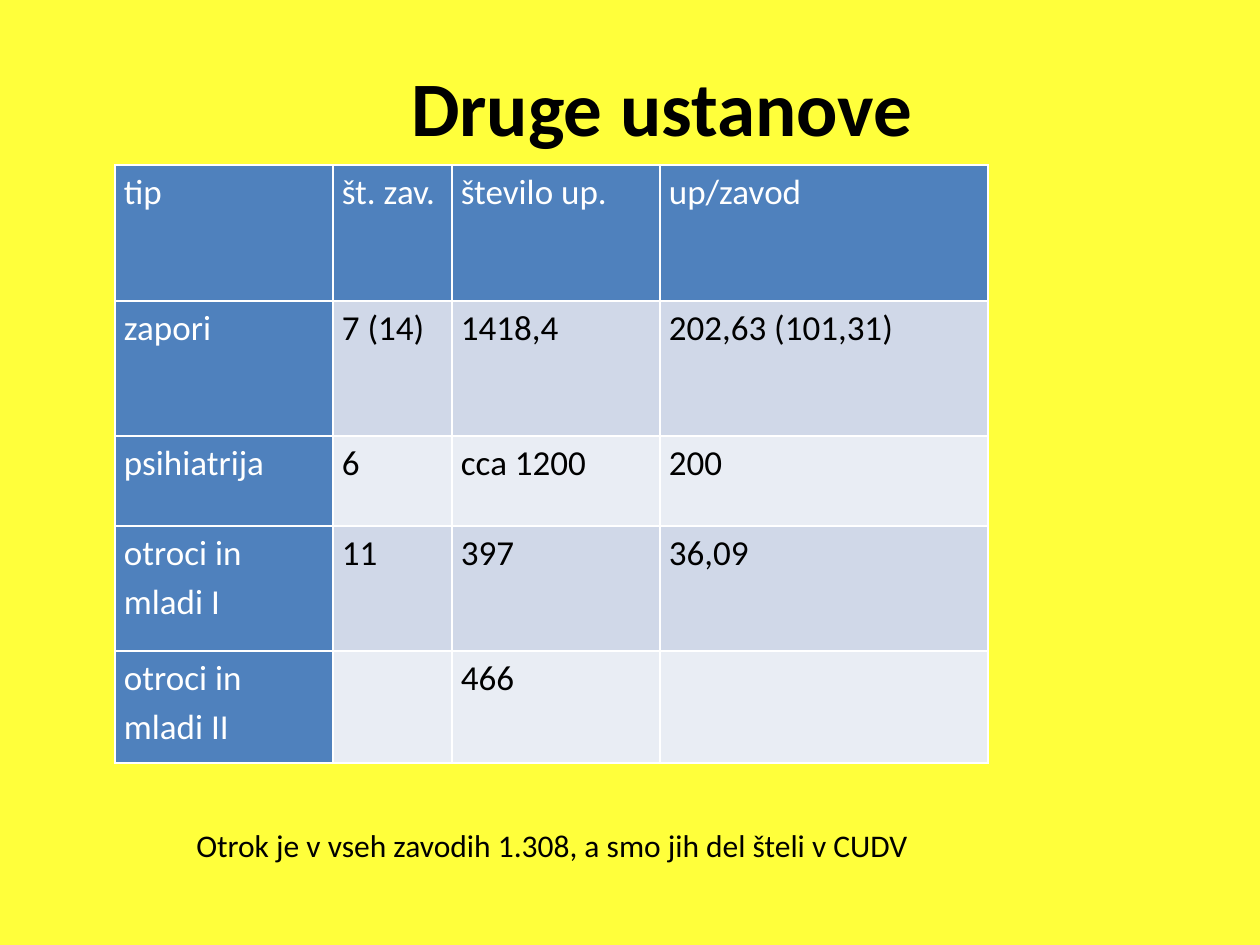
from dataclasses import dataclass

from pptx import Presentation
from pptx.dml.color import RGBColor as RGB
from pptx.enum.text import MSO_ANCHOR as ANCHOR, PP_ALIGN as ALIGN
from pptx.oxml import parse_xml
from pptx.oxml.ns import nsdecls
from pptx.util import Pt


@dataclass(frozen=True)
class Theme:
    font: str = "Calibri"
    background: RGB = RGB(0xFF, 0xFF, 0x3B)
    header: RGB = RGB(0x4F, 0x81, 0xBD)
    bands: tuple = (RGB(0xE9, 0xED, 0xF4), RGB(0xD0, 0xD8, 0xE8))
    dark: RGB = RGB(0, 0, 0)
    light: RGB = RGB(0xFF, 0xFF, 0xFF)
    title_size: int = 44
    cell_size: int = 20
    note_size: int = 18


T = Theme()


def px(n):
    return round(n * 914400 / 126)


def style(p, size, color, bold=False):
    p.font.name = T.font
    p.font.size = Pt(size)
    p.font.color.rgb = color
    p.font.bold = bold


prs = Presentation()
prs.slide_width, prs.slide_height = px(1260), px(945)
s = prs.slides.add_slide(prs.slide_layouts[6])
s.background.fill.solid()
s.background.fill.fore_color.rgb = T.background

title = s.shapes.add_textbox(px(95), px(27), px(1134), px(157))
tf = title.text_frame
tf.word_wrap = True
tf.vertical_anchor = ANCHOR.MIDDLE
p = tf.paragraphs[0]
p.text = "Druge ustanove"
p.alignment = ALIGN.CENTER
style(p, T.title_size, T.dark, bold=True)

rows = [
    ("tip", "št. zav.", "število up.", "up/zavod"),
    ("zapori", "7 (14)", "1418,4", "202,63 (101,31)"),
    ("psihiatrija", "6", "cca 1200", "200"),
    ("otroci in mladi I", "11", "397", "36,09"),
    ("otroci in mladi II", "", "466", ""),
]
col_widths = [218, 119, 208, 328]
row_heights = [136, 135, 90, 125, 112]
table = s.shapes.add_table(
    len(rows), len(col_widths), px(115), px(165), px(sum(col_widths)), px(sum(row_heights))
).table
table.first_row = table.horz_banding = False
for col, width in zip(table.columns, col_widths):
    col.width = px(width)
for row, height in zip(table.rows, row_heights):
    row.height = px(height)

for i, values in enumerate(rows):
    for j, value in enumerate(values):
        cell = table.cell(i, j)
        is_header = i == 0 or j == 0
        cell.margin_left = cell.margin_right = px(9)
        cell.margin_top = cell.margin_bottom = 0
        cell.fill.solid()
        cell.fill.fore_color.rgb = T.header if is_header else T.bands[i % 2]
        p = cell.text_frame.paragraphs[0]
        p.text = value
        p.line_spacing = 1.15
        style(p, T.cell_size, T.light if is_header else T.dark)
        tc_pr = cell._tc.get_or_add_tcPr()
        for k, side in enumerate("LRTB"):
            tc_pr.insert(k, parse_xml(
                f'<a:ln{side} {nsdecls("a")} w="{Pt(1)}"><a:solidFill>'
                f'<a:srgbClr val="{T.light}"/></a:solidFill></a:ln{side}>'
            ))

note = s.shapes.add_textbox(px(184), px(820), px(746), px(50))
tf = note.text_frame
tf.word_wrap = False
p = tf.paragraphs[0]
p.text = "Otrok je v vseh zavodih 1.308, a smo jih del šteli v CUDV"
style(p, T.note_size, T.dark)

prs.save("out.pptx")
